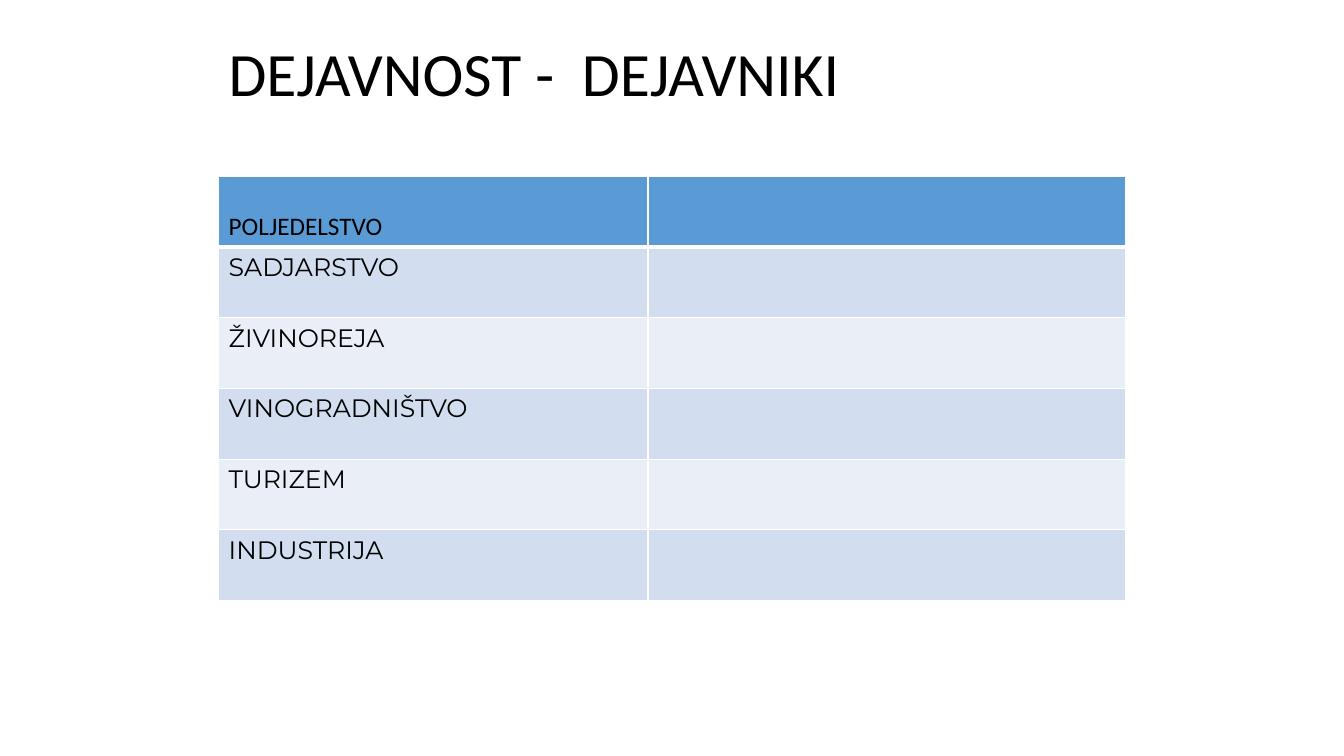
"""Build a slide with a table of economic activities and their factors."""
from dataclasses import dataclass

import pptx
import pptx.dml.color
import pptx.enum.text
import pptx.oxml
import pptx.oxml.ns
import pptx.util

Cm = pptx.util.Cm
ANCHOR = pptx.enum.text.MSO_ANCHOR
COLORS = {
    "text": "000000",
    "border": "FFFFFF",
    "header": "5B9BD5",
    "odd": "D2DEEF",
    "even": "EAEFF7",
}
LEFT, WIDTH = Cm(5.51), Cm(22.86)
COL_WIDTHS = (Cm(10.82), Cm(12.04))
ROW_HEIGHT = Cm(1.78)


@dataclass
class Activity:
    name: str
    fill: str
    font: str = "Montserrat"
    anchor: ANCHOR = ANCHOR.TOP
    bottom_pt: float = 1


ACTIVITIES = [
    Activity("POLJEDELSTVO", "header", "Calibri", ANCHOR.BOTTOM, 3),
    Activity("SADJARSTVO", "odd"),
    Activity("ŽIVINOREJA", "even"),
    Activity("VINOGRADNIŠTVO", "odd"),
    Activity("TURIZEM", "even"),
    Activity("INDUSTRIJA", "odd"),
]


def rgb(name: str) -> pptx.dml.color.RGBColor:
    return pptx.dml.color.RGBColor.from_string(COLORS[name])


def write(tf, text: str, font: str, size: float) -> None:
    r = tf.paragraphs[0].add_run()
    r.text = text
    formats = {"name": font, "size": pptx.util.Pt(size), "bold": False}
    for key, value in formats.items():
        setattr(r.font, key, value)
    r.font.color.rgb = rgb("text")


def add_borders(cell, bottom_pt: float) -> None:
    tc_pr = cell._tc.get_or_add_tcPr()
    for side, width in {"L": 1, "R": 1, "T": 1, "B": bottom_pt}.items():
        tc_pr.append(pptx.oxml.parse_xml(
            f'<a:ln{side} {pptx.oxml.ns.nsdecls("a")} w="{pptx.util.Pt(width)}">'
            f'<a:solidFill><a:srgbClr val="{COLORS["border"]}"/></a:solidFill>'
            f'</a:ln{side}>'
        ))


def add_title(s, text: str) -> None:
    tf = s.shapes.add_textbox(LEFT, Cm(0.76), WIDTH, Cm(2.36)).text_frame
    for key, value in {"word_wrap": True, "vertical_anchor": ANCHOR.MIDDLE}.items():
        setattr(tf, key, value)
    tf.paragraphs[0].line_spacing = 0.9
    write(tf, text, "Calibri", 44)


def add_activities(s, activities: list[Activity]) -> None:
    count = len(activities)
    table = s.shapes.add_table(
        count, len(COL_WIDTHS), LEFT, Cm(4.45), WIDTH, ROW_HEIGHT * count
    ).table
    for column, width in zip(table.columns, COL_WIDTHS):
        column.width = width
    for row, activity in zip(table.rows, activities):
        row.height = ROW_HEIGHT
        for cell in row.cells:
            add_borders(cell, activity.bottom_pt)
            cell.fill.solid()
            cell.fill.fore_color.rgb = rgb(activity.fill)
            cell.vertical_anchor = activity.anchor
        write(row.cells[0].text_frame, activity.name, activity.font, 18)


def main() -> None:
    prs = pptx.Presentation()
    prs.slide_width, prs.slide_height = Cm(33.87), Cm(19.05)
    s = prs.slides.add_slide(prs.slide_layouts[6])
    add_title(s, "DEJAVNOST -  DEJAVNIKI")
    add_activities(s, ACTIVITIES)
    prs.save("out.pptx")


if __name__ == "__main__":
    main()
